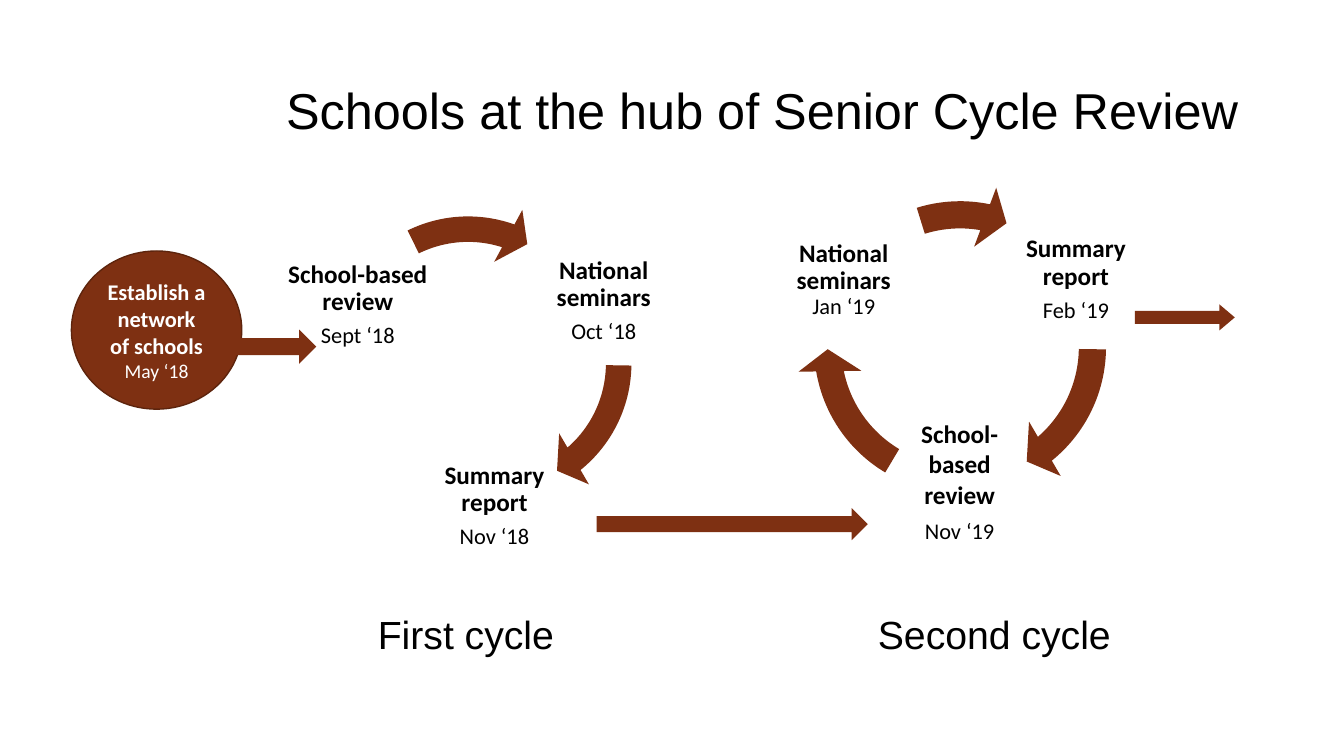
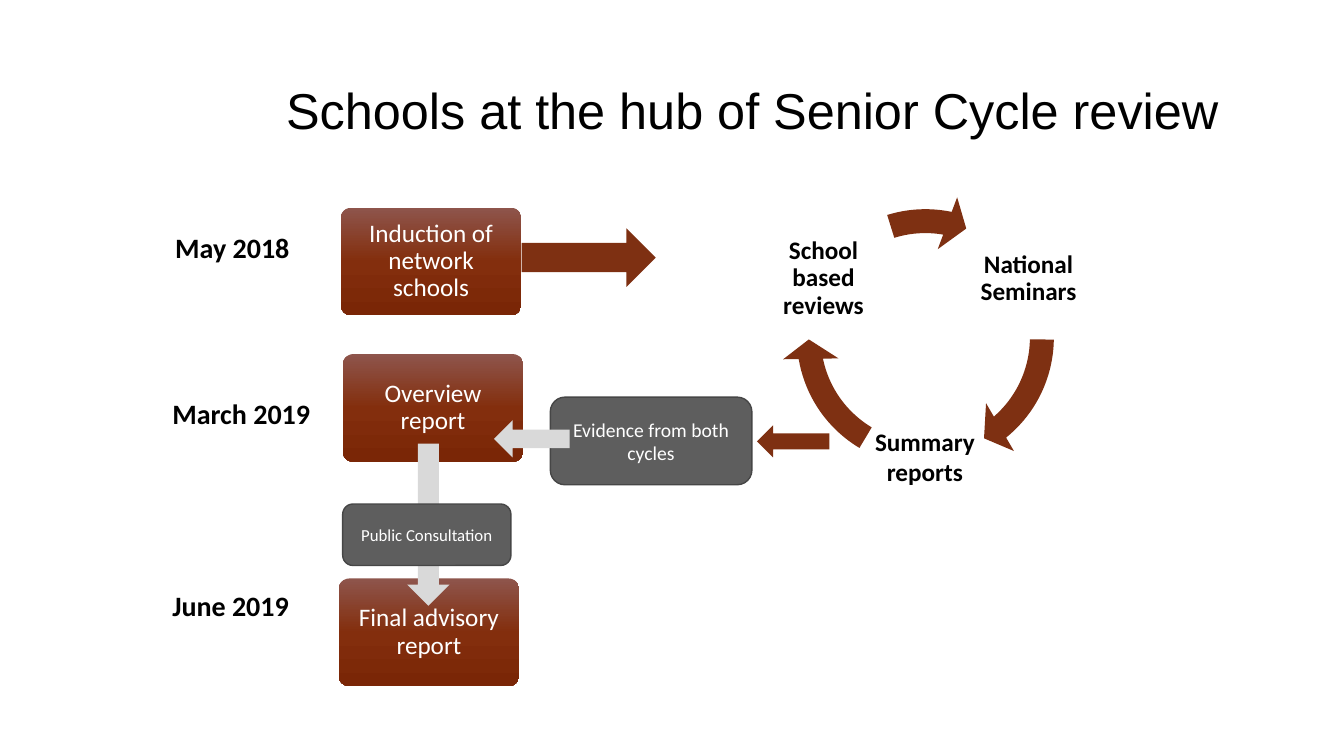
from copy import deepcopy

from pptx import Presentation
from pptx.dml.color import RGBColor
from pptx.enum.shapes import MSO_SHAPE
from pptx.enum.text import MSO_ANCHOR, PP_ALIGN
from pptx.oxml.ns import qn
from pptx.util import Pt

LEFT, CENTER = PP_ALIGN.LEFT, PP_ALIGN.CENTER
TOP, MIDDLE = MSO_ANCHOR.TOP, MSO_ANCHOR.MIDDLE
RIGHT_ARROW, LEFT_ARROW = MSO_SHAPE.RIGHT_ARROW, MSO_SHAPE.LEFT_ARROW
DOWN_ARROW, CIRCULAR_ARROW = MSO_SHAPE.DOWN_ARROW, MSO_SHAPE.CIRCULAR_ARROW
ELLIPSE, ROUNDED = MSO_SHAPE.OVAL, MSO_SHAPE.ROUNDED_RECTANGLE

RUST, RUST_EDGE = "7E3012", "5D240D"
GREY, GREY_EDGE, PALE = "5E5E5E", "464646", "D9D9D9"
BLACK, WHITE = "000000", "FFFFFF"
RUST_GRADIENT = [(0, "8E554C"), (0.5, "832E0D"), (1, "7A2606")]
HEADING, BODY = "Arial", "Calibri"

# All frames are (left, top, width, height) in points.
TITLE_FRAME = (197.3, 28.8, 696, 104.4)

# Circular arrows: start and end angle in degrees, clockwise from the right.
RIGHT_ARC, LEFT_ARC, TOP_ARC = (0.88, 50.17), (120.87, 169.52), (252.72, 280.93)
WIDE_TOP_ARC = (243.78, 288.86)
ARC_THICKNESS, ARC_BARB, ARC_HEAD = 0.083, 9.6, 0.096

# Stages: frame, name, date, line spacing, gap between name and date.
CYCLES_PAGE = {
    "title": "Schools at the hub of Senior Cycle Review",
    "arcs": [
        (243.4, 149.8, 219.6, [RIGHT_ARC]),
        (224.6, 142.6, 219.6, [WIDE_TOP_ARC]),
        (568.8, 131, 234, [RIGHT_ARC, LEFT_ARC, TOP_ARC]),
    ],
    "stages": [
        ((186.5, 171.4, 138.2, 93), "School-based review", "Sept ‘18", 0.9, 6),
        ((377.3, 168.5, 108, 93), "National seminars", "Oct ‘18", 0.9, 6),
        ((306.7, 315, 93, 93), "Summary report", "Nov ‘18", 0.9, 6),
        ((548, 150.5, 109.4, 98.6), "National seminars", "Jan ‘19", 0.9, 0),
        ((719.3, 150.5, 98.6, 98.6), "Summary report", "Feb ‘19", 0.9, 6),
        ((636.5, 284.4, 98, 118.8), "School-\vbased review", "Nov ‘19", 1, 6),
    ],
}
CYCLE_NAMES = [((262.8, 436.3, 304.6, 49), "First cycle"),
               ((620, 436.3, 318.2, 49), "Second cycle")]
NETWORK_FRAME = (51, 179.3, 121.7, 113)
NETWORK_TEXT = [("Establish a network of schools", 16, True), ("May ‘18", 14, False)]
CYCLE_LINK = (426.2, 362.9, 193.7, 23)
ONWARD_LINK = (810.7, 217.4, 71.3, 18.7)
NETWORK_LINK = (163.4, 235.4, 62.6, 24.5)

TIMELINE_PAGE = {
    "title": "Schools at the hub of Senior Cycle review",
    "arcs": [(558, 138.2, 206, [RIGHT_ARC, LEFT_ARC, TOP_ARC])],
    "stages": [
        ((691.2, 155.5, 87, 87), "National Seminars", None, 0.9, 0),
        ((617.8, 273.6, 85.7, 104.4), "Summary reports", None, 1, 0),
        ((540, 155.5, 96.5, 87), "School based reviews", None, 0.9, 0),
    ],
}
DATES = [(118, 161.3, "May 2018"), (116, 280, "March 2019"), (116, 416.9, "June 2019")]
DATE_SIZE = (121.7, 31.7)
MILESTONES = [(243.4, 148.3, "Induction of network schools"),
              (244.8, 252.9, "Overview report"),
              (241.9, 413.2, "Final advisory report")]
MILESTONE_SIZE = (129, 77)
EVIDENCE_FRAME = (393.1, 283.7, 144, 62.6)
CONSULTATION_FRAME = (244.8, 360, 120.2, 43.9)
TIMELINE_ARROWS = [
    (DOWN_ARROW, (290.9, 316.8, 30.2, 115.9), PALE),
    (LEFT_ARROW, (352.8, 300.2, 54, 26.6), PALE),
    (LEFT_ARROW, (540.7, 303.8, 51.8, 23), RUST),
    (RIGHT_ARROW, (372.6, 163.1, 95.8, 41.8), RUST),
]


def color(value):
    return RGBColor.from_string(value)


def points(frame):
    return [Pt(length) for length in frame]


def write(box, paragraphs, font=BODY, ink=BLACK, align=CENTER, anchor=MIDDLE,
          spacing=1, gap=0, insets=(7.2, 3.6)):
    """Fill a box with (text, size, bold) paragraphs, set gap points apart."""
    frame = box.text_frame
    frame.word_wrap = True
    frame.vertical_anchor = anchor
    frame.margin_left = frame.margin_right = Pt(insets[0])
    frame.margin_top = frame.margin_bottom = Pt(insets[1])
    for index, (text, size, bold) in enumerate(paragraphs):
        para = frame.add_paragraph() if index else frame.paragraphs[0]
        para.text = text
        para.alignment = align
        para.line_spacing = spacing
        if index:
            para.space_before = Pt(gap)
        for span in para.runs:
            span.font.name = font
            span.font.size = Pt(size)
            span.font.bold = bold
            span.font.color.rgb = color(ink)


def add_text(page, frame, paragraphs, **style):
    write(page.shapes.add_textbox(*points(frame)), paragraphs, **style)


def add_shape(page, kind, frame, fill=RUST, edge=None, adjustments=()):
    shape = page.shapes.add_shape(kind, *points(frame))
    shape.shadow.inherit = False
    shape.fill.solid()
    shape.fill.fore_color.rgb = color(fill)
    if edge:
        shape.line.color.rgb = color(edge)
        shape.line.width = Pt(1)
    else:
        shape.line.fill.background()
    for index, value in enumerate(adjustments):
        shape.adjustments[index] = value
    return shape


def shade(shape, stops):
    """Give a shape a top-to-bottom gradient of three (position, colour) stops."""
    shape.fill.gradient()
    shape.fill.gradient_angle = 270
    stop_list = shape._element.spPr.find(qn("a:gradFill")).find(qn("a:gsLst"))
    stop_list.append(deepcopy(stop_list[0]))
    for stop, (position, value) in zip(shape.fill.gradient_stops, stops):
        stop.position = position
        stop.color.rgb = color(value)


def add_arc(page, left, top, size, start, end):
    # Adjustments hold 60000ths of a degree, divided by 100000.
    barb, end, start = (angle * 0.6 for angle in (ARC_BARB, end, start))
    add_shape(page, CIRCULAR_ARROW, (left, top, size, size),
              adjustments=(ARC_THICKNESS, barb, end, start, ARC_HEAD))


def add_page(deck, content):
    """Add a page with its title, circular arrows and cycle stages."""
    page = deck.slides.add_slide(deck.slide_layouts[6])
    add_text(page, TITLE_FRAME, [(content["title"], 36, False)],
             font=HEADING, align=LEFT, spacing=0.9)
    for left, top, size, arcs in content["arcs"]:
        for start, end in arcs:
            add_arc(page, left, top, size, start, end)
    for frame, name, date, spacing, gap in content["stages"]:
        paragraphs = [(name, 18, True)]
        if date:
            paragraphs.append((date, 16, False))
        add_text(page, frame, paragraphs, spacing=spacing, gap=gap, insets=(2, 2))
    return page


def build_cycles(deck):
    page = add_page(deck, CYCLES_PAGE)
    for frame, name in CYCLE_NAMES:
        add_text(page, frame, [(name, 28, False)], font=HEADING, align=LEFT,
                 anchor=TOP, spacing=0.9)
    add_shape(page, RIGHT_ARROW, CYCLE_LINK)
    add_shape(page, RIGHT_ARROW, ONWARD_LINK, adjustments=(0.5, 0.59))
    network = add_shape(page, ELLIPSE, NETWORK_FRAME, edge=RUST_EDGE)
    write(network, NETWORK_TEXT, ink=WHITE)
    add_shape(page, RIGHT_ARROW, NETWORK_LINK)


def build_timeline(deck):
    page = add_page(deck, TIMELINE_PAGE)
    for left, top, date in DATES:
        add_text(page, (left, top, *DATE_SIZE), [(date, 20, True)],
                 align=LEFT, anchor=TOP)
    for left, top, name in MILESTONES:
        milestone = add_shape(page, ROUNDED, (left, top, *MILESTONE_SIZE),
                              adjustments=[0.1])
        shade(milestone, RUST_GRADIENT)
        write(milestone, [(name, 18, False)], ink=WHITE, spacing=0.9, insets=(5, 5))
    evidence = add_shape(page, ROUNDED, EVIDENCE_FRAME, GREY, GREY_EDGE)
    write(evidence, [("Evidence from both cycles", 14, False)], ink=WHITE)
    for kind, frame, fill in TIMELINE_ARROWS:
        add_shape(page, kind, frame, fill)
    consultation = add_shape(page, ROUNDED, CONSULTATION_FRAME, GREY, GREY_EDGE)
    write(consultation, [("Public Consultation", 12, False)], ink=WHITE)


def main():
    deck = Presentation()
    deck.slide_width, deck.slide_height = Pt(960), Pt(540)
    build_cycles(deck)
    build_timeline(deck)
    deck.save("out.pptx")


if __name__ == "__main__":
    main()
